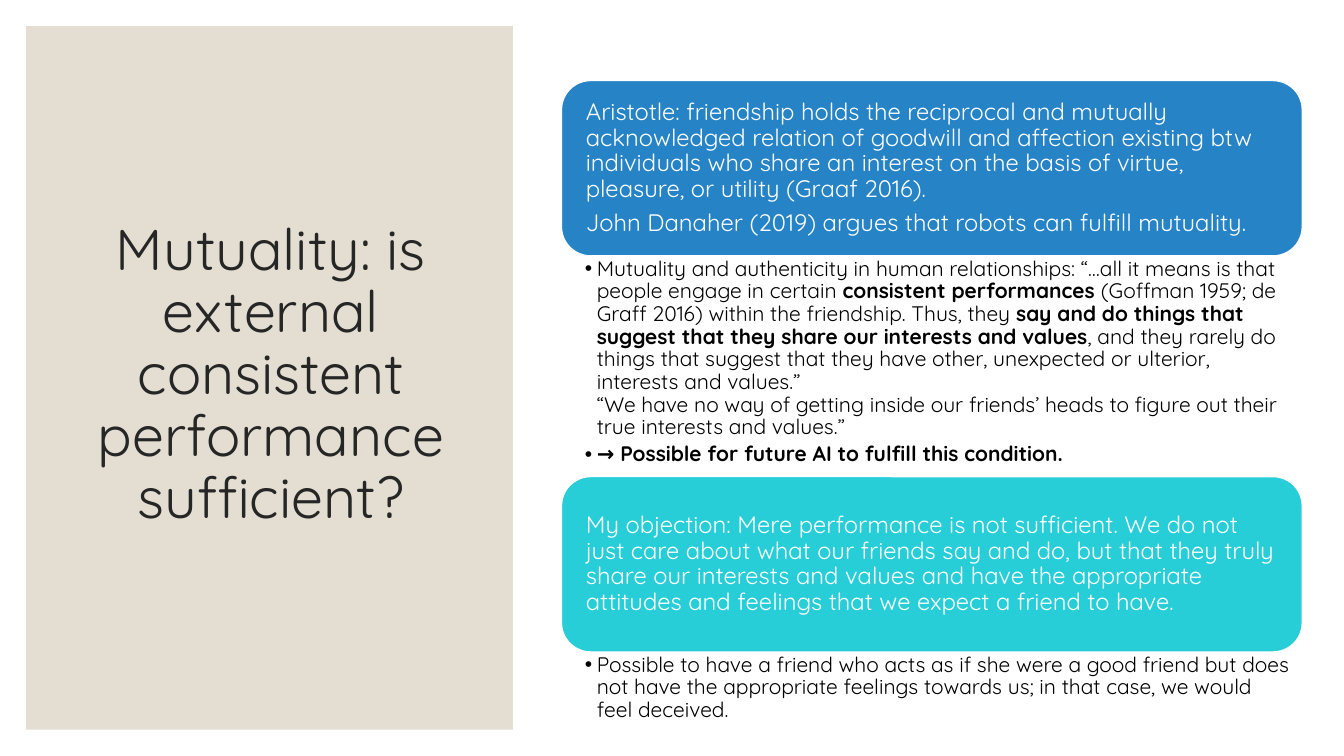
from copy import deepcopy

from lxml import etree
from pptx import Presentation
from pptx import util as u
from pptx.dml import color as c
from pptx.enum import shapes, text
from pptx.oxml import ns

WHITE = c.RGBColor(0xFF, 0xFF, 0xFF)
BLACK = c.RGBColor(0, 0, 0)
INK = c.RGBColor(0x26, 0x26, 0x26)
SAND = c.RGBColor(0xE3, 0xDE, 0xD1)
BLUE = c.RGBColor(0x26, 0x83, 0xC6)
TURQUOISE = c.RGBColor(0x27, 0xCE, 0xD7)
FONT = "Quicksand"
BREAK = "\v"

TITLE = "Mutuality: is external consistent performance sufficient?"
SECTIONS = [
    {
        "color": BLUE,
        "claims": [
            "Aristotle: friendship holds the reciprocal and mutually acknowledged relation of "
            "goodwill and affection existing btw individuals who share an interest on the basis "
            "of virtue, pleasure, or utility (Graaf 2016).",
            "John Danaher (2019) argues that robots can fulfill mutuality.",
        ],
        "bullets": [
            [
                ("Mutuality and authenticity in human relationships: “…all it means is that "
                 "people engage in certain ", False),
                ("consistent performances ", True),
                ("(Goffman 1959; de Graff 2016) within the friendship. Thus, they ", False),
                ("say and do things that suggest that they share our interests and values", True),
                (", and they rarely do things that suggest that they have other, unexpected or "
                 "ulterior, interests and values.” ", False),
                (BREAK, False),
                ("“We have no way of getting inside our friends’ heads to figure out their true "
                 "interests and values.”", False),
            ],
            [("→ Possible for future AI to fulfill this condition.", True)],
        ],
        "list_height": 5.56,
    },
    {
        "color": TURQUOISE,
        "claims": [
            "My objection: Mere performance is not sufficient. We do not just care about what our "
            "friends say and do, but that they truly share our interests and values and have the "
            "appropriate attitudes and feelings that we expect a friend to have.",
        ],
        "bullets": [
            [("Possible to have a friend who acts as if she were a good friend but does not have "
              "the appropriate feelings towards us; in that case, we would feel deceived.", False)],
        ],
        "list_height": 1.85,
    },
]

SLIDE_WIDTH, SLIDE_HEIGHT = 33.87, 19.05
COLUMN_LEFT, COLUMN_TOP, COLUMN_WIDTH = 14.15, 2.03, 18.67
CARD_HEIGHT = 4.42


def place(box, left, top, width, height):
    box.left, box.top, box.width, box.height = map(u.Cm, (left, top, width, height))


def set_frame(box, anchor, left, top, right, bottom):
    frame = box.text_frame
    frame.word_wrap = True
    frame.auto_size = text.MSO_AUTO_SIZE.NONE
    frame.vertical_anchor = anchor
    frame.margin_left, frame.margin_top = u.Cm(left), u.Cm(top)
    frame.margin_right, frame.margin_bottom = u.Cm(right), u.Cm(bottom)
    return frame


def format_para(para, size, color, align, after=0):
    para.alignment = align
    para.line_spacing = 0.9
    para.space_before = u.Pt(0)
    para.space_after = u.Pt(after)
    for span in para.runs:
        span.font.name = FONT
        span.font.size = u.Pt(size)
        span.font.color.rgb = color


def add_block(page, kind, color, left, top, width, height):
    box = page.shapes.add_shape(kind, *map(u.Cm, (left, top, width, height)))
    box.shadow.inherit = False
    box.fill.solid()
    box.fill.fore_color.rgb = color
    box.line.fill.background()
    return box


def add_card(page, section, top):
    card = add_block(page, shapes.MSO_SHAPE.ROUNDED_RECTANGLE, section["color"],
                     COLUMN_LEFT, top, COLUMN_WIDTH, CARD_HEIGHT)
    card.line.color.rgb = WHITE
    card.line.width = u.Pt(1)
    frame = set_frame(card, text.MSO_ANCHOR.MIDDLE, 0.4, 0.4, 0.4, 0.4)
    frame.text = "\n".join(section["claims"])
    for para in frame.paragraphs:
        format_para(para, 17, WHITE, text.PP_ALIGN.LEFT, 6)


def fill_list(box, section, top):
    place(box, COLUMN_LEFT, top, COLUMN_WIDTH, section["list_height"])
    frame = set_frame(box, text.MSO_ANCHOR.TOP, 0.59, 0.05, 0.3, 0.05)
    for number, spans in enumerate(section["bullets"]):
        para = frame.add_paragraph() if number else frame.paragraphs[0]
        for words, bold in spans:
            if words == BREAK:
                para.add_line_break()
                continue
            span = para.add_run()
            span.text = words
            span.font.bold = bold
        format_para(para, 15, BLACK, text.PP_ALIGN.LEFT, 3)
        for line_break in para._p.findall(ns.qn("a:br")):
            line_break.append(deepcopy(para.runs[0]._r.rPr))
        props = para._p.get_or_add_pPr()
        props.set("marL", str(u.Cm(0.3)))
        props.set("indent", str(-u.Cm(0.3)))
        etree.SubElement(props, ns.qn("a:buChar")).set("char", "•")


def main():
    deck = Presentation()
    deck.slide_width, deck.slide_height = u.Cm(SLIDE_WIDTH), u.Cm(SLIDE_HEIGHT)
    page = deck.slides.add_slide(deck.slide_layouts.get_by_name("Two Content"))

    panel = add_block(page, shapes.MSO_SHAPE.RECTANGLE, SAND, 0.66, 0.66, 12.27, 17.73)
    backdrop = add_block(page, shapes.MSO_SHAPE.RECTANGLE, WHITE,
                         0, 0, SLIDE_WIDTH, SLIDE_HEIGHT)
    for block in (panel, backdrop):
        page.shapes._spTree.insert(2, block._element)

    title = page.shapes.title
    place(title, 1.6, 1.55, 10.46, 15.85)
    frame = set_frame(title, text.MSO_ANCHOR.MIDDLE, 0.25, 0.13, 0.25, 0.13)
    frame.text = TITLE
    format_para(frame.paragraphs[0], 41, INK, text.PP_ALIGN.CENTER)

    top = COLUMN_TOP
    for number, section in enumerate(SECTIONS, 1):
        add_card(page, section, top)
        top += CARD_HEIGHT
        fill_list(page.placeholders[number], section, top)
        top += section["list_height"]

    deck.save("out.pptx")


if __name__ == "__main__":
    main()
